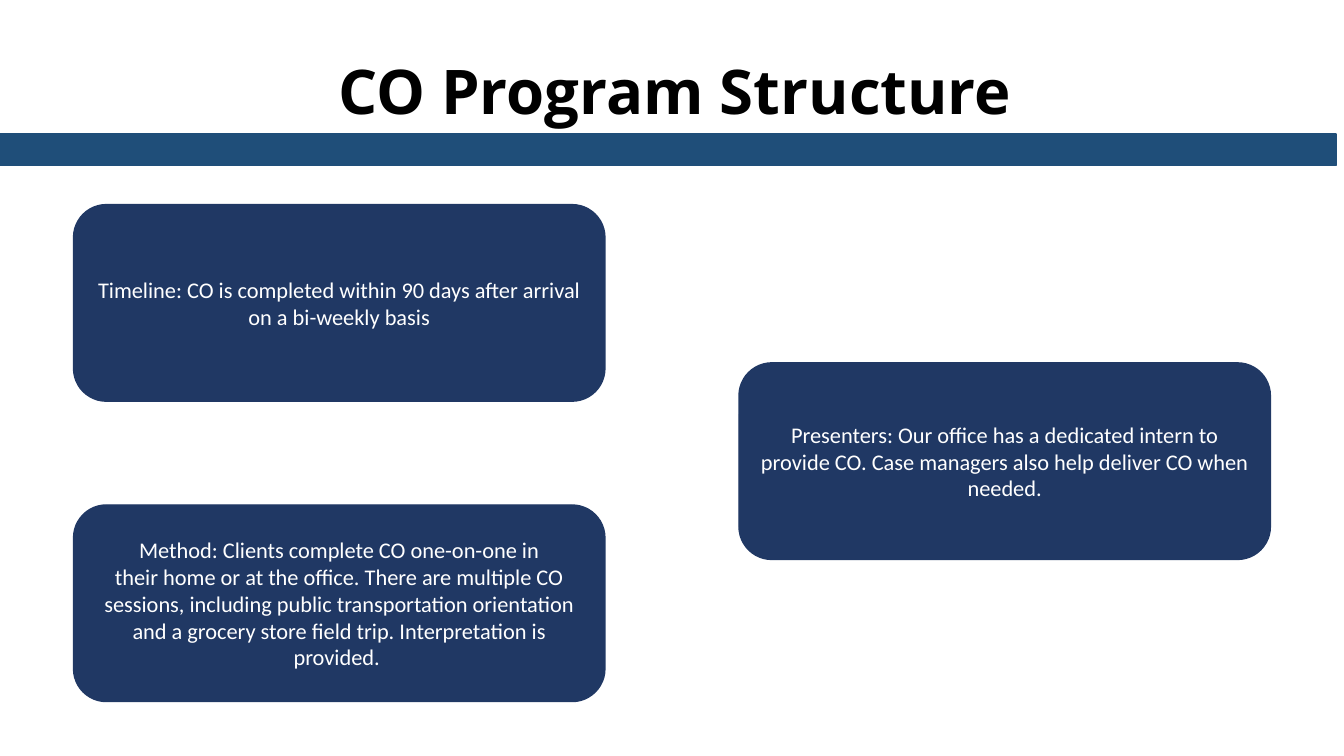
from dataclasses import dataclass

from pptx import Presentation
from pptx.dml.color import RGBColor
from pptx.enum.shapes import MSO_SHAPE
from pptx.enum.text import MSO_ANCHOR, PP_ALIGN
from pptx.util import Inches, Pt

RECT = MSO_SHAPE.RECTANGLE
ROUND = MSO_SHAPE.ROUNDED_RECTANGLE
CENTER = PP_ALIGN.CENTER
TOP = MSO_ANCHOR.TOP
MIDDLE = MSO_ANCHOR.MIDDLE

BLUE = "1F4E79"
NAVY = "203864"
WHITE = "FFFFFF"
BLACK = "000000"

CARD_W, CARD_H = 5.27, 1.95
LEFT, RIGHT = 0.73, 7.33
HARD = chr(160)  # no-break space


@dataclass
class Card:
    left: float
    top: float
    text: str


CARDS = [
    Card(LEFT, 2.03, "Timeline: CO is completed within 90 days after arrival "
                     "on a bi-weekly basis"),
    Card(LEFT, 5.01, f"Method: Clients complete CO one-on-one in their{HARD}home or at "
                     "the office. There are multiple CO sessions, including public "
                     f"transportation orientation and a{HARD}grocery store field trip. "
                     f"Interpretation is provided.{HARD}"),
    Card(RIGHT, 3.6, "Presenters: Our office has a dedicated intern to provide CO. "
                     "Case managers also help deliver CO when needed."),
]


def color(code: str) -> RGBColor:
    return RGBColor.from_string(code)


def write(shape, text: str, font: str, size: int, tint: str, anchor, bold=False) -> None:
    frame = shape.text_frame
    frame.text = text
    frame.word_wrap = True
    frame.vertical_anchor = anchor
    line = frame.paragraphs[0]
    line.alignment = CENTER
    style = line.runs[0].font
    style.name = font
    style.size = Pt(size)
    style.bold = bold
    style.color.rgb = color(tint)


def block(slide, kind, left: float, top: float, width: float, height: float, tint: str):
    shape = slide.shapes.add_shape(
        kind, Inches(left), Inches(top), Inches(width), Inches(height))
    shape.shadow.inherit = False
    shape.fill.solid()
    shape.fill.fore_color.rgb = color(tint)
    shape.line.color.rgb = color(tint)
    shape.line.width = Pt(1)
    return shape


def main() -> None:
    deck = Presentation()
    deck.slide_width = Inches(13.33)
    deck.slide_height = Inches(7.5)
    slide = deck.slides.add_slide(deck.slide_layouts[5])

    # Title
    title = slide.shapes.title
    title.left, title.top = Inches(0.58), Inches(0.47)
    title.width, title.height = Inches(12.23), Inches(0.84)
    write(title, "CO Program Structure", "Open Sans", 44, BLACK, TOP, bold=True)

    # Band under the title
    block(slide, RECT, -0.08, 1.33, 13.33, 0.31, BLUE)

    # Cards
    for card in CARDS:
        shape = block(slide, ROUND, card.left, card.top, CARD_W, CARD_H, NAVY)
        write(shape, card.text, "Calibri", 16, WHITE, MIDDLE)

    deck.save("out.pptx")


if __name__ == "__main__":
    main()
